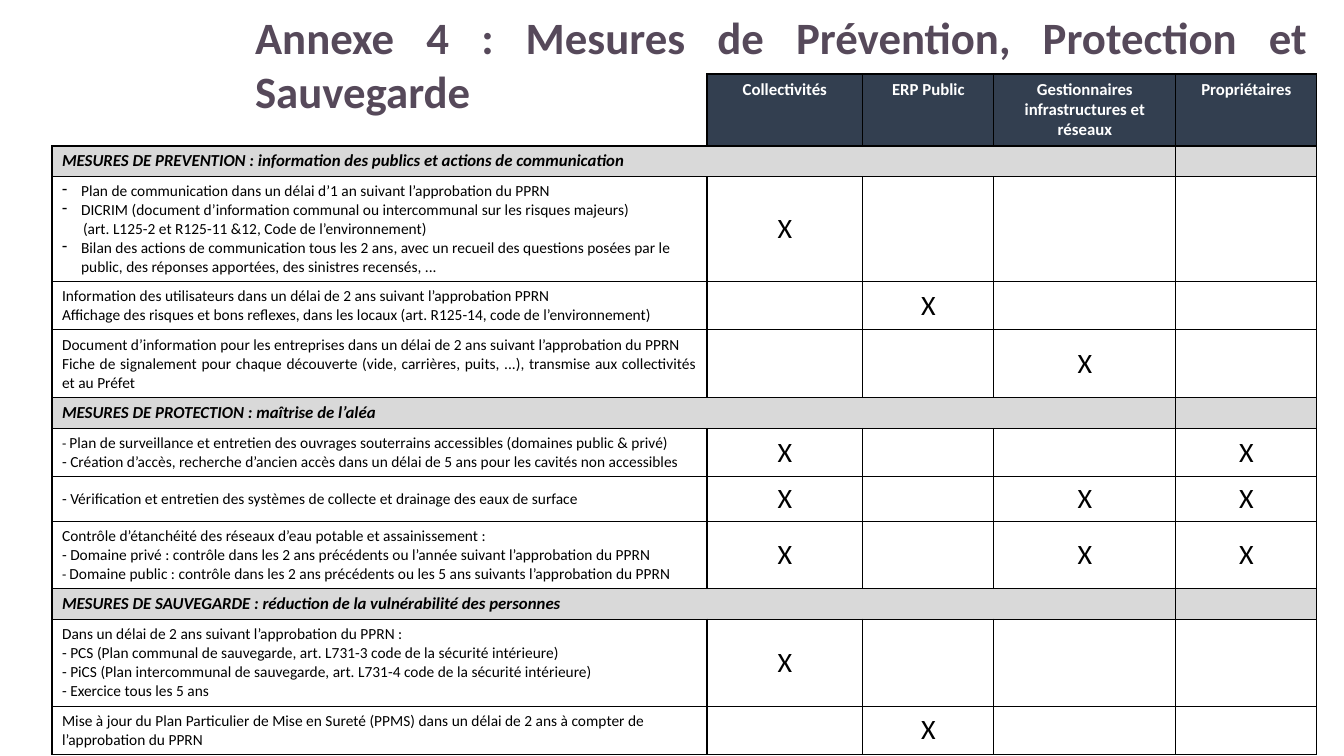
"""Build the annex slide listing prevention, protection and safeguard measures."""
import pptx
import pptx.dml.color
import pptx.enum.text
import pptx.oxml.ns
import pptx.util
from lxml import etree

EMU_PER_PX = 914400 / 100.8
FONT = "Calibri"
BLACK, WHITE = "000000", "FFFFFF"
PLUM, NAVY, GREY = "56495A", "333F50", "D9D9D9"
ALIGN = pptx.enum.text.PP_ALIGN
ANCHOR = pptx.enum.text.MSO_ANCHOR

COLUMN_WIDTHS = [655, 156, 131, 182, 141]
HEADER_HEIGHT, SECTION_HEIGHT = 72, 30
AUDIENCES = ["Collectivités", "ERP Public",
             "Gestionnaires infrastructures et réseaux", "Propriétaires"]

TITLE_FORMAT = {"name": FONT, "size": pptx.util.Pt(32), "bold": True}
HEADER_FORMAT = {"name": FONT, "size": pptx.util.Pt(12), "bold": True}
SECTION_FORMAT = {**HEADER_FORMAT, "italic": True}
MEASURE_FORMAT = {"name": FONT, "size": pptx.util.Pt(11)}
DASH_FORMAT = {"name": FONT, "size": pptx.util.Pt(10)}
CROSS_FORMAT = {"name": FONT, "size": pptx.util.Pt(20)}

SECTIONS = [
    ("MESURES DE PREVENTION : information des publics et actions de communication", [
        (104, "top", [1], [
            ("bullet", "Plan de communication dans un délai d’1 an suivant l’approbation du PPRN"),
            ("bullet", "DICRIM (document d’information communal ou intercommunal sur les risques majeurs)"),
            ("indented", "(art. L125-2 et R125-11 &12, Code de l’environnement)"),
            ("bullet", "Bilan des actions de communication tous les 2 ans, avec un recueil des questions "
                       "posées par le public, des réponses apportées, des sinistres recensés, ..."),
        ]),
        (48, "top", [2], [
            ("justified", "Information des utilisateurs dans un délai de 2 ans suivant l’approbation PPRN"),
            ("justified", "Affichage des risques et bons reflexes, dans les locaux "
                          "(art. R125-14, code de l’environnement)"),
        ]),
        (68, "middle", [3], [
            ("justified", "Document d’information pour les entreprises dans un délai de 2 ans "
                          "suivant l’approbation du PPRN"),
            ("justified", "Fiche de signalement pour chaque découverte (vide, carrières, puits, ...), "
                          "transmise aux collectivités et au Préfet"),
        ]),
    ]),
    ("MESURES DE PROTECTION : maîtrise de l’aléa", [
        (48, "top", [1, 4], [
            ("small dash", "Plan de surveillance et entretien des ouvrages souterrains accessibles "
                           "(domaines public & privé)"),
            ("justified", "- Création d’accès, recherche d’ancien accès dans un délai de 5 ans "
                          "pour les cavités non accessibles"),
        ]),
        (45, "middle", [1, 3, 4], [
            ("left", "- Vérification et entretien des systèmes de collecte et drainage des eaux de surface"),
        ]),
        (67, "top", [1, 3, 4], [
            ("left", "Contrôle d’étanchéité des réseaux d’eau potable et assainissement :"),
            ("left", "- Domaine privé : contrôle dans les 2 ans précédents ou l’année suivant "
                     "l’approbation du PPRN"),
            ("small dash", "Domaine public : contrôle dans les 2 ans précédents ou les 5 ans suivants "
                           "l’approbation du PPRN"),
        ]),
    ]),
    ("MESURES DE SAUVEGARDE : réduction de la vulnérabilité des personnes", [
        (87, "top", [1], [
            ("justified", "Dans un délai de 2 ans suivant l’approbation du PPRN :"),
            ("justified", "- PCS (Plan communal de sauvegarde, art. L731-3 code de la sécurité intérieure)"),
            ("justified", "- PiCS (Plan intercommunal de sauvegarde, art. L731-4 code de la sécurité intérieure)"),
            ("justified", "- Exercice tous les 5 ans"),
        ]),
        (48, "top", [2], [
            ("left", "Mise à jour du Plan Particulier de Mise en Sureté (PPMS) dans un délai de 2 ans "
                     "à compter de l’approbation du PPRN"),
        ]),
    ]),
]


def px(length):
    """Turn pixels into EMU."""
    return round(length * EMU_PER_PX)


def color(value):
    """Turn a hex string into a colour."""
    return pptx.dml.color.RGBColor.from_string(value)


def child(parent, tag, **attributes):
    """Append a DrawingML element to a parent."""
    return etree.SubElement(parent, pptx.oxml.ns.qn(tag), attributes)


def write(paragraph, text, formats, ink=BLACK):
    """Add a formatted run to a paragraph."""
    run = paragraph.add_run()
    run.text = text
    for key, value in formats.items():
        setattr(run.font, key, value)
    run.font.color.rgb = color(ink)


def style_cell(cell, fill=None, corner=False):
    """Draw a cell's borders and fill, and size its blank line."""
    properties = cell._tc.get_or_add_tcPr()
    for side in "LRTB":
        border = child(properties, f"a:ln{side}", w="12700")
        if corner and side in "LT":
            child(border, "a:noFill")
        else:
            child(child(border, "a:solidFill"), "a:srgbClr", val=BLACK)
    if fill:
        cell.fill.solid()
        cell.fill.fore_color.rgb = color(fill)
    else:
        cell.fill.background()
    child(cell.text_frame.paragraphs[0]._p, "a:endParaRPr", sz="1200")


def write_centered(cell, text, formats, ink=BLACK):
    """Write one centred line in a cell."""
    paragraph = cell.text_frame.paragraphs[0]
    paragraph.alignment = ALIGN.CENTER
    write(paragraph, text, formats, ink)


def write_measure(cell, lines):
    """Write the lines describing a measure."""
    for index, (kind, text) in enumerate(lines):
        frame = cell.text_frame
        paragraph = frame.add_paragraph() if index else frame.paragraphs[0]
        paragraph.alignment = ALIGN.JUSTIFY if kind in ("justified", "small dash") else ALIGN.LEFT
        properties = paragraph._p.get_or_add_pPr()
        if kind == "bullet":
            properties.set("marL", str(px(19)))
            properties.set("indent", str(-px(19)))
            child(properties, "a:buChar", char="-")
        elif kind == "indented":
            properties.set("marL", str(px(21)))
        elif kind == "small dash":
            write(paragraph, "- ", DASH_FORMAT)
        write(paragraph, text, MEASURE_FORMAT)


def add_title(slide):
    """Place and format the slide title."""
    title = slide.shapes.title
    title.left, title.top, title.width, title.height = map(px, (245, 18, 1073, 91))
    frame = title.text_frame
    frame.word_wrap = True
    frame.auto_size = pptx.enum.text.MSO_AUTO_SIZE.NONE
    frame.vertical_anchor = ANCHOR.MIDDLE
    heading = frame.paragraphs[0]
    heading.alignment = ALIGN.JUSTIFY
    write(heading, "Annexe 4 : Mesures de Prévention, Protection et Sauvegarde", TITLE_FORMAT, PLUM)


def add_measures_table(slide):
    """Add the table crossing measures with audiences."""
    heights = [HEADER_HEIGHT]
    for _, measures in SECTIONS:
        heights += [SECTION_HEIGHT] + [measure[0] for measure in measures]
    table = slide.shapes.add_table(
        len(heights), len(COLUMN_WIDTHS),
        px(52), px(74), px(sum(COLUMN_WIDTHS)), px(sum(heights))).table
    table.first_row = table.horz_banding = False
    for column, width in zip(table.columns, COLUMN_WIDTHS):
        column.width = px(width)
    for row, height in zip(table.rows, heights):
        row.height = px(height)

    style_cell(table.cell(0, 0), corner=True)
    for column, audience in enumerate(AUDIENCES, 1):
        style_cell(table.cell(0, column), NAVY)
        write_centered(table.cell(0, column), audience, HEADER_FORMAT, WHITE)

    row = 1
    for section, measures in SECTIONS:
        for cell in table.rows[row].cells:
            style_cell(cell, GREY)
        table.cell(row, 0).merge(table.cell(row, 3))
        write(table.cell(row, 0).text_frame.paragraphs[0], section, SECTION_FORMAT)
        for row, (_, anchor, crosses, lines) in enumerate(measures, row + 1):
            for cell in table.rows[row].cells:
                style_cell(cell)
            table.cell(row, 0).vertical_anchor = ANCHOR.MIDDLE if anchor == "middle" else ANCHOR.TOP
            write_measure(table.cell(row, 0), lines)
            for column in crosses:
                table.cell(row, column).vertical_anchor = ANCHOR.MIDDLE
                write_centered(table.cell(row, column), "X", CROSS_FORMAT)
        row += 1


def main():
    """Build and save the slide."""
    deck = pptx.Presentation()
    deck.slide_width, deck.slide_height = px(1344), px(756)
    slide = deck.slides.add_slide(deck.slide_layouts[5])
    add_title(slide)
    add_measures_table(slide)
    deck.save("out.pptx")


if __name__ == "__main__":
    main()
